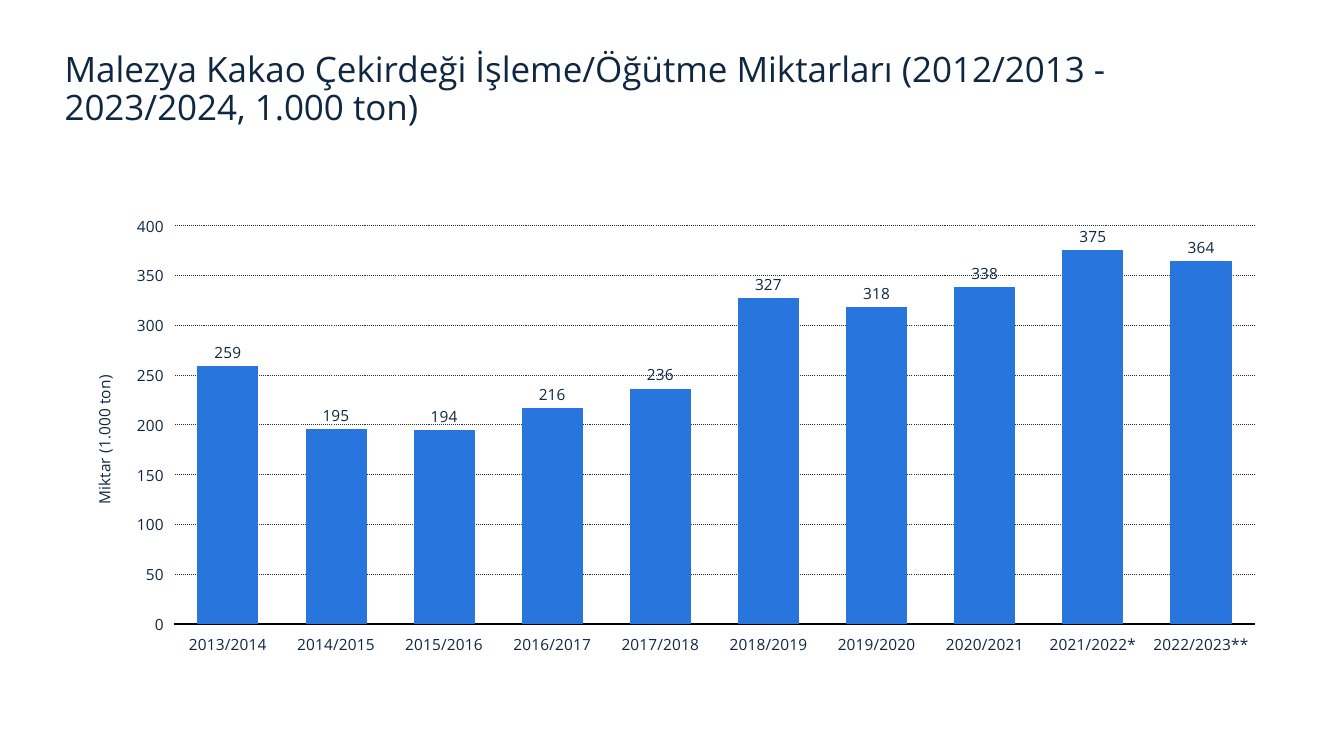
from lxml import etree
from pptx import Presentation
from pptx.chart.data import CategoryChartData
from pptx.dml.color import RGBColor
from pptx.enum import chart as ch, dml, text
from pptx.oxml.ns import qn
from pptx.util import Inches, Pt

FONT, INK, BLUE = "Open Sans", "0F2741", "2875DD"
YEARS = [f"{y}/{y + 1}" for y in range(2013, 2021)] + ["2021/2022*", "2022/2023**"]
GRINDINGS = [259, 195, 194, 216, 236, 327, 318, 338, 375, 364]


def rgb(color):
    return RGBColor.from_string(color)


def style_font(font, size=11, color=INK, name=FONT, bold=False):
    font.size, font.name, font.bold = Pt(size), name, bold
    font.color.rgb = rgb(color)


def style_line(line, color, width, dash=None):
    line.color.rgb = rgb(color)
    line.width = Pt(width)
    line.dash_style = dash


def write_text(tf, content, spacing=None, **font):
    p = tf.paragraphs[0]
    p.line_spacing = spacing
    r = p.add_run()
    r.text = content
    style_font(r.font, **font)


def manual_layout(parent, after, inner=False, **fractions):
    """Place a chart part by fractions of the chart area (x, y, w, h)."""
    for old in parent.findall(qn("c:layout")):
        parent.remove(old)
    layout = etree.Element(qn("c:layout"))
    box = etree.SubElement(layout, qn("c:manualLayout"))
    settings = {"layoutTarget": "inner"} if inner else {}
    settings.update(xMode="edge", yMode="edge", **fractions)
    for tag, value in settings.items():
        etree.SubElement(box, qn(f"c:{tag}")).set("val", str(value))
    position = 0 if after is None else parent.index(after) + 1
    parent.insert(position, layout)


def style_axis(axis):
    axis.major_tick_mark = axis.minor_tick_mark = ch.XL_TICK_MARK.NONE
    axis.tick_label_position = ch.XL_TICK_LABEL_POSITION.LOW
    style_font(axis.tick_labels.font)


def style_value_axis(axis, title):
    style_axis(axis)
    axis.minimum_scale, axis.maximum_scale, axis.major_unit = 0, 400, 50
    axis.tick_labels.number_format = "#,##0"
    axis.tick_labels.number_format_is_linked = False
    axis.format.line.fill.background()
    style_line(axis.major_gridlines.format.line, "2F2F2F", 0.75,
               dml.MSO_LINE.ROUND_DOT)
    tf = axis.axis_title.text_frame
    write_text(tf, title)
    body = tf._txBody.find(qn("a:bodyPr"))
    body.set("rot", "-5400000")
    body.set("vert", "horz")
    element = axis.axis_title._element
    manual_layout(element, element.find(qn("c:tx")), x=0.02, y=0.36)


def style_columns(plot):
    plot.gap_width, plot.overlap = 80, -30
    plot.vary_by_categories = False
    columns = plot.series[0]
    columns.format.fill.solid()
    columns.format.fill.fore_color.rgb = rgb(BLUE)
    style_line(columns.format.line, BLUE, 0.75)
    labels = columns.data_labels
    labels.show_value = True
    labels.position = ch.XL_LABEL_POSITION.OUTSIDE_END
    style_font(labels.font)


def add_column_chart(slide, categories, values, axis_title, *box):
    data = CategoryChartData()
    data.categories = categories
    data.add_series("Series 1", values)
    chart = slide.shapes.add_chart(
        ch.XL_CHART_TYPE.COLUMN_CLUSTERED, *map(Inches, box), data).chart
    chart.has_legend = chart.has_title = False
    style_font(chart.font, size=18, color="000000", name="Lato")
    style_axis(chart.category_axis)
    style_line(chart.category_axis.format.line, "000000", 2)
    style_value_axis(chart.value_axis, axis_title)
    style_columns(chart.plots[0])
    area = chart._chartSpace.chart.plotArea
    manual_layout(area, None, inner=True, x=0.09, y=0.04, w=0.89, h=0.87)


def set_title(slide, content, *box):
    sp = slide.shapes.title
    sp.left, sp.top, sp.width, sp.height = map(Inches, box)
    tf = sp.text_frame
    tf.word_wrap = True
    tf.auto_size = text.MSO_AUTO_SIZE.NONE
    tf.vertical_anchor = text.MSO_ANCHOR.BOTTOM
    tf.paragraphs[0].alignment = text.PP_ALIGN.LEFT
    write_text(tf, content, spacing=0.9, size=25)


def main():
    prs = Presentation()
    prs.slide_width, prs.slide_height = Inches(13.33), Inches(7.5)
    slide = prs.slides.add_slide(prs.slide_layouts[5])
    set_title(slide, "Malezya Kakao Çekirdeği İşleme/Öğütme Miktarları "
              "(2012/2013 - 2023/2024, 1.000 ton)", 0.54, 0.46, 12.24, 0.86)
    add_column_chart(slide, YEARS, GRINDINGS, "Miktar (1.000 ton)",
                     0.64, 2.06, 12.05, 4.54)
    prs.save("out.pptx")


if __name__ == "__main__":
    main()
